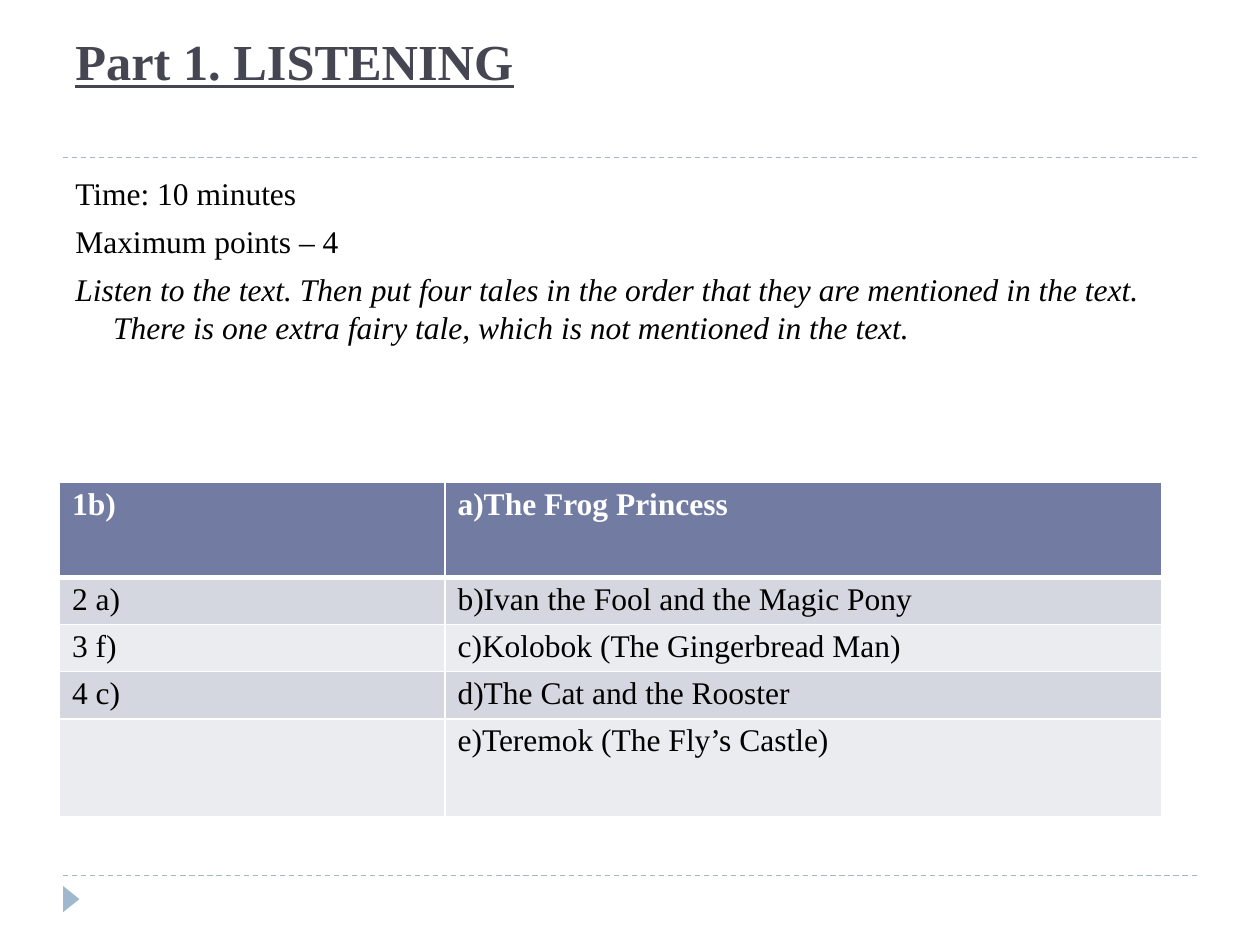
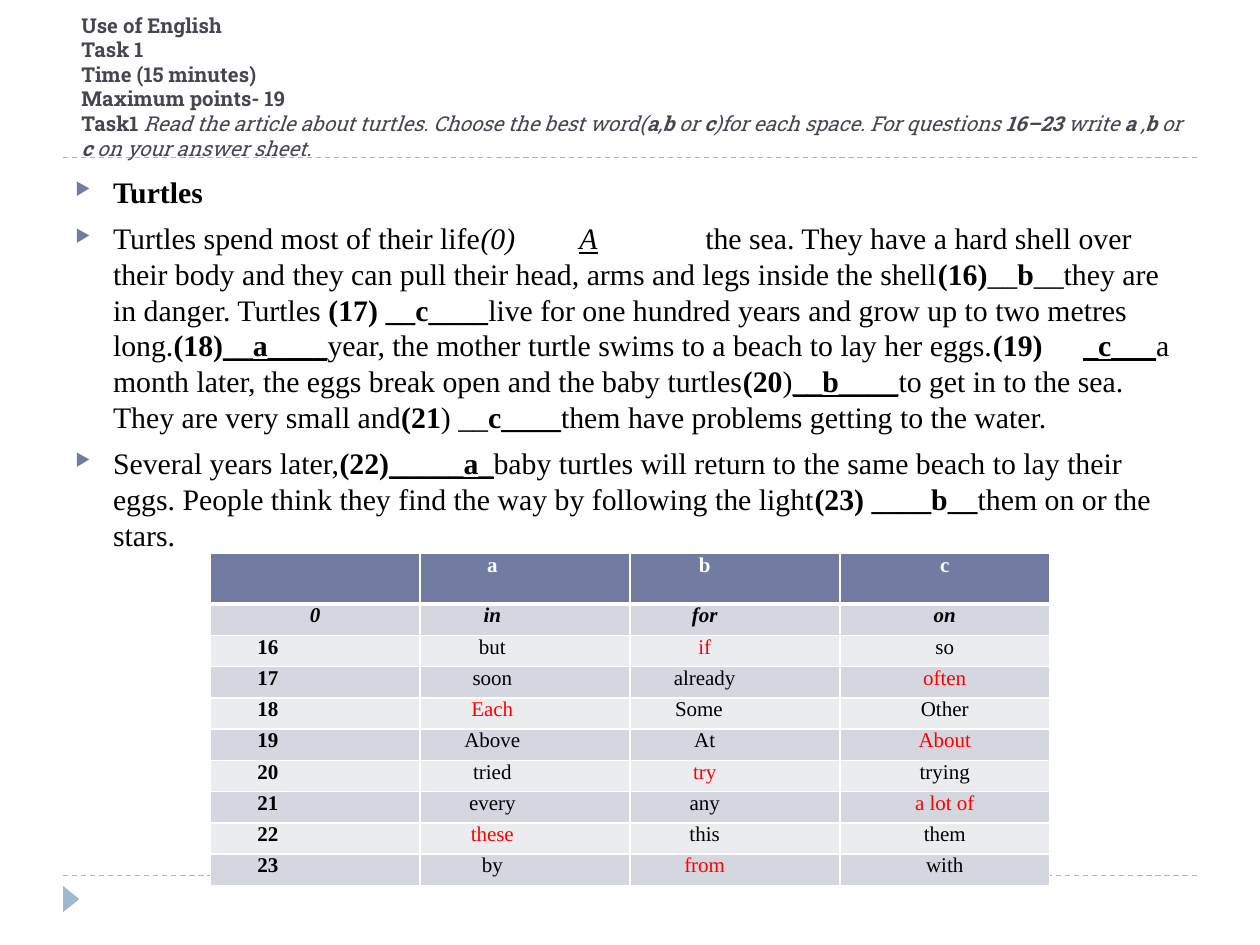
from dataclasses import dataclass
from typing import NamedTuple

from lxml import etree
from pptx import Presentation
from pptx.dml.color import RGBColor
from pptx.enum.dml import MSO_LINE
from pptx.enum.shapes import MSO_CONNECTOR, MSO_SHAPE
from pptx.enum.text import MSO_ANCHOR, PP_ALIGN
from pptx.oxml.ns import qn
from pptx.util import Cm, Pt

LINE, TRIANGLE = MSO_CONNECTOR.STRAIGHT, MSO_SHAPE.ISOSCELES_TRIANGLE
DASH = MSO_LINE.DASH
TOP, BOTTOM = MSO_ANCHOR.TOP, MSO_ANCHOR.BOTTOM
LEFT, CENTER = PP_ALIGN.LEFT, PP_ALIGN.CENTER

SERIF, SLAB = "Times New Roman", "Roboto Slab"
COLORS = {
    "title": "464653", "text": "000000", "white": "FFFFFF", "key": "FF0000",
    "trim": "9FB8CD", "head": "727CA3", "odd": "D5D7E0", "even": "EBECF0",
}


class Part(NamedTuple):
    """A stretch of text; style holds any of b, i, u."""
    text: str
    style: str = ""


@dataclass
class Box:
    left: float
    top: float
    width: float
    height: float

    def lengths(self) -> list:
        return [Cm(v) for v in (self.left, self.top, self.width, self.height)]


@dataclass
class Grid:
    left: float
    top: float
    cols: list
    rows: list


BODY = Box(1.27, 3.38, 22.86, 13.72)


def color(name: str) -> RGBColor:
    return RGBColor.from_string(COLORS[name])


def write(par, text: str, *, size: float, font: str = SERIF,
          ink: str = "text", style: str = "") -> None:
    """Add text to a paragraph; each newline becomes a line break."""
    for num, line in enumerate(text.split("\n")):
        if num:
            par.add_line_break()
        run = par.add_run()
        run.text = line
        run.font.name, run.font.size = font, Pt(size)
        run.font.color.rgb = color(ink)
        run.font.bold = "b" in style
        run.font.italic = "i" in style
        run.font.underline = "u" in style


def add_frame(slide, box: Box, anchor=TOP):
    frame = slide.shapes.add_textbox(*box.lengths()).text_frame
    frame.word_wrap = True
    frame.vertical_anchor = anchor
    return frame


# Shared look
def add_trim(slide) -> None:
    for y in (17.65, 3.18):
        rule = slide.shapes.add_connector(LINE, Cm(1.27), Cm(y), Cm(24.13), Cm(y))
        rule.line.color.rgb = color("trim")
        rule.line.width = Pt(0.75)
        rule.line.dash_style = DASH
        etree.SubElement(rule._element.spPr, qn("a:effectLst"))
    mark = slide.shapes.add_shape(TRIANGLE, *Box(1.17, 17.96, 0.53, 0.33).lengths())
    mark.rotation = 90
    mark.shadow.inherit = False
    mark.fill.solid()
    mark.fill.fore_color.rgb = color("trim")
    mark.line.fill.background()


def add_title(slide, box: Box, parts: list, *, size: float, font: str,
              anchor=TOP) -> None:
    par = add_frame(slide, box, anchor).paragraphs[0]
    for part in parts:
        write(par, part.text, size=size, font=font, ink="title", style=part.style)


def add_bullet(props) -> None:
    tint = etree.SubElement(props, qn("a:buClr"))
    etree.SubElement(tint, qn("a:srgbClr"), val=COLORS["head"])
    etree.SubElement(props, qn("a:buSzPct"), val="58000")
    etree.SubElement(props, qn("a:buChar"), char="▶")


def add_body(slide, items: list, *, size: float, bullet: bool = False) -> None:
    frame = add_frame(slide, BODY)
    for num, parts in enumerate(items):
        par = frame.add_paragraph() if num else frame.paragraphs[0]
        par.space_before = Pt(6)
        props = par._p.get_or_add_pPr()
        props.set("marL", str(Cm(0.76)))
        props.set("indent", str(-Cm(0.76)))
        props.set("defTabSz", str(Cm(2.54)))
        if bullet:
            add_bullet(props)
        for part in parts:
            write(par, part.text, size=size, style=part.style)


# Tables
def add_edges(cell, row: int) -> None:
    props = cell._tc.get_or_add_tcPr()
    thick = {0: "B", 1: "T"}.get(row)
    for side in "LRTB":
        width = Pt(3 if side == thick else 1)
        edge = etree.SubElement(props, qn(f"a:ln{side}"), w=str(width))
        fill = etree.SubElement(edge, qn("a:solidFill"))
        etree.SubElement(fill, qn("a:srgbClr"), val=COLORS["white"])


def add_table(slide, grid: Grid):
    size = len(grid.rows), len(grid.cols)
    box = Box(grid.left, grid.top, sum(grid.cols), sum(grid.rows))
    table = slide.shapes.add_table(*size, *box.lengths()).table
    for col, width in zip(table.columns, grid.cols):
        col.width = Cm(width)
    for num, (row, height) in enumerate(zip(table.rows, grid.rows)):
        row.height = Cm(height)
        for cell in row.cells:
            add_edges(cell, num)
            cell.fill.solid()
            band = "odd" if num % 2 else "even"
            cell.fill.fore_color.rgb = color(band if num else "head")
    return table


def fill_tales(table, tales: list) -> None:
    for row, words in enumerate(tales):
        look = {"style": "", "ink": "text"} if row else {"style": "b", "ink": "white"}
        for col, word in enumerate(words):
            cell = table.cell(row, col)
            cell.margin_top = cell.margin_bottom = Cm(0.09)
            if word:
                write(cell.text_frame.paragraphs[0], word, size=18, **look)


def fill_quiz(table, quiz: list, keys: list) -> None:
    shifts = [0, 1.32, 1.22, 0]  # right margins that move the centred words
    for row, words in enumerate(quiz):
        for col, word in enumerate(words):
            if not word:
                continue
            cell = table.cell(row, col)
            number = row > 1 and col == 0
            cell.margin_top = cell.margin_bottom = 0
            cell.margin_left = Cm(0.95 if number else 0)
            cell.margin_right = Cm(1.45 if word == "Some" else shifts[col])
            par = cell.text_frame.paragraphs[0]
            par.alignment = LEFT if number else CENTER
            style = "bi" if row == 1 else "b" if row == 0 or number else ""
            ink = "key" if word in keys else "text"
            write(par, word, size=12, style=style, ink=ink if row else "white")


# Content
INTRO = [
    [Part("Time: 10 minutes")],
    [Part("Maximum points – 4")],
    [Part("Listen to the text. Then put four tales in the order that they are "
          "mentioned in the text. There is one extra fairy tale, which is not "
          "mentioned in the text.", "i")],
]
TALES = [
    ("1b)", "a)The Frog Princess"),
    ("2 a)", "b)Ivan the Fool and the Magic Pony"),
    ("3 f)", "c)Kolobok (The Gingerbread Man)"),
    ("4 c)", "d)The Cat and the Rooster"),
    ("", "e)Teremok (The Fly’s Castle)"),
]
TASK = [
    Part("Use of English\nTask 1\nTime (15 minutes)\nMaximum points- 19\nTask1", "b"),
    Part(" Read the article about turtles. Choose the best word(", "i"),
    Part("a", "bi"), Part(",", "i"), Part("b ", "bi"), Part("or ", "i"),
    Part("c", "bi"), Part(")for each space. For questions ", "i"),
    Part("16–23 ", "bi"), Part("write ", "i"), Part("a ", "bi"),
    Part(",", "i"), Part("b ", "bi"), Part("or ", "i"), Part("c ", "bi"),
    Part("on your answer sheet.", "i"),
]
STORY = [
    [Part("Turtles", "b")],
    [
        Part("Turtles spend most of their life"), Part("(0)", "i"),
        Part("\tA\t", "iu"),
        Part("the sea. They have a hard shell over their body and they can pull "
             "their head, arms and legs inside the shell"),
        Part("(16)", "b"), Part("__"), Part("b", "b"),
        Part("__they are in danger. Turtles "), Part("(17) __c____", "b"),
        Part("live for one hundred years and grow up to two metres long."),
        Part("(18)", "b"), Part("__", "u"), Part("a____", "bu"),
        Part("year, the mother turtle swims to a beach to lay her eggs."),
        Part("(19)", "b"), Part("\t", "u"), Part("_c___", "bu"),
        Part("a month later, the eggs break open and the baby turtles"),
        Part("(20", "b"), Part(")"), Part("__", "u"), Part("b", "bu"),
        Part("____", "u"), Part("to get in to the sea. They are very small and"),
        Part("(21", "b"), Part(") __"), Part("c____", "b"),
        Part("them have problems getting to the water."),
    ],
    [
        Part("Several years later,"), Part("(22)", "b"), Part("_____", "u"),
        Part("a", "bu"), Part("_", "u"),
        Part("baby turtles will return to the same beach to lay their eggs. "
             "People think they find the way by following the light"),
        Part("(23) ____b__", "b"), Part("them on or the stars."),
    ],
]
QUIZ = [
    ("", "a", "b", "c"),
    ("0", "in", "for", "on"),
    ("16", "but", "if", "so"),
    ("17", "soon", "already", "often"),
    ("18", "Each", "Some", "Other"),
    ("19", "Above", "At", "About"),
    ("20", "tried", "try", "trying"),
    ("21", "every", "any", "a lot of"),
    ("22", "these", "this", "them"),
    ("23", "by", "from", "with"),
]
KEYS = ["if", "often", "Each", "About", "try", "a lot of", "these", "from"]


def main() -> None:
    deck = Presentation()
    deck.slide_width, deck.slide_height = Cm(25.4), Cm(19.05)
    first, second = [deck.slides.add_slide(deck.slide_layouts[6]) for _ in range(2)]
    for slide in (first, second):
        add_trim(slide)

    # Listening
    add_title(first, Box(1.27, 0.41, 22.86, 1.55), [Part("Part 1. LISTENING", "bu")],
              size=28.8, font=SERIF, anchor=BOTTOM)
    add_body(first, INTRO, size=18)
    grid = Grid(1.2, 9.73, [7.77, 14.45], [1.91] + [0.95] * 3 + [1.98])
    fill_tales(add_table(first, grid), TALES)

    # Use of English
    add_title(second, Box(1.39, 0.13, 22.86, 3.1), TASK, size=11.7, font=SLAB)
    add_body(second, STORY, size=17, bullet=True)
    grid = Grid(4.24, 11.16, [4.23] * 4, [1.0] + [0.63] * 9)
    fill_quiz(add_table(second, grid), QUIZ, KEYS)

    deck.save("out.pptx")


if __name__ == "__main__":
    main()
